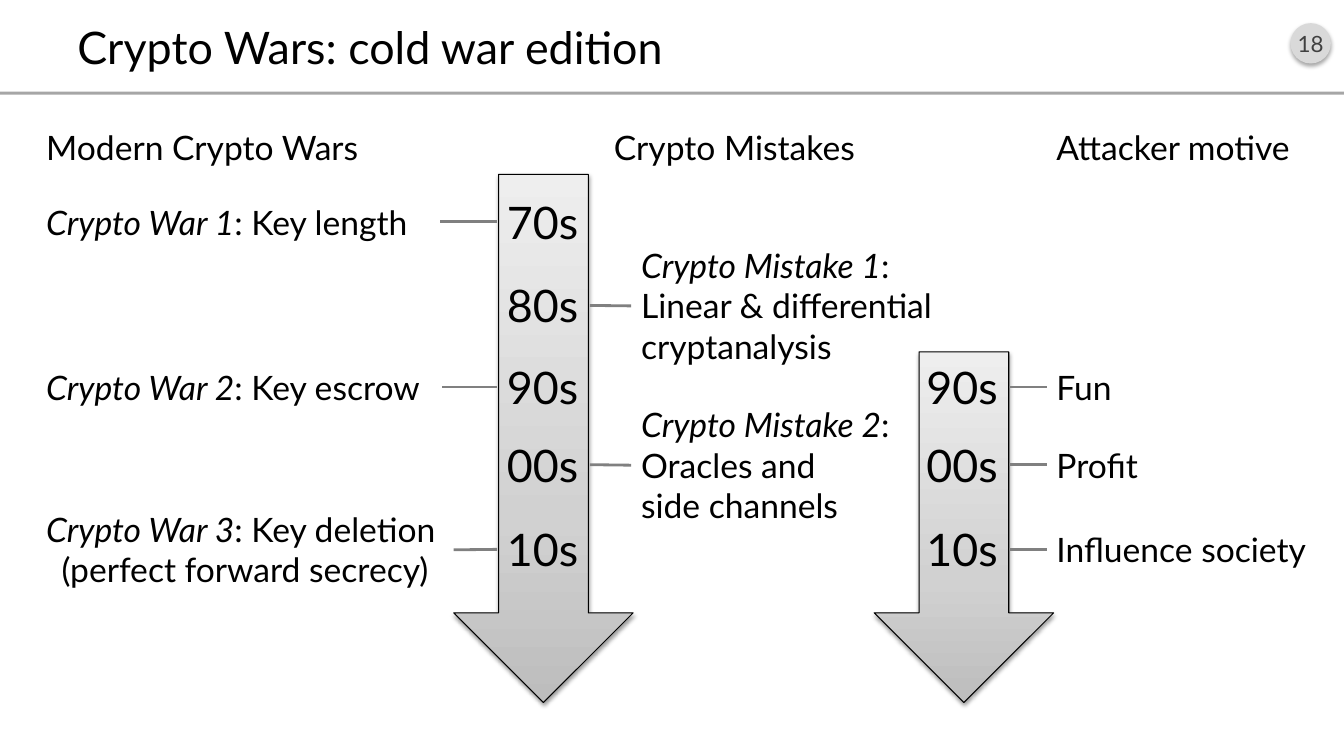
from lxml import etree
from pptx import Presentation
from pptx.dml.color import RGBColor
from pptx.enum.shapes import MSO_CONNECTOR, MSO_SHAPE
from pptx.enum.text import MSO_ANCHOR, MSO_AUTO_SIZE, PP_ALIGN
from pptx.oxml.ns import qn
from pptx.util import Inches, Pt

LINE = MSO_CONNECTOR.STRAIGHT
OVAL, RECT, DOWN_ARROW = MSO_SHAPE.OVAL, MSO_SHAPE.RECTANGLE, MSO_SHAPE.DOWN_ARROW
MIDDLE, TOP = MSO_ANCHOR.MIDDLE, MSO_ANCHOR.TOP
FIT, FIXED = MSO_AUTO_SIZE.SHAPE_TO_FIT_TEXT, MSO_AUTO_SIZE.NONE
LEFT, CENTER = PP_ALIGN.LEFT, PP_ALIGN.CENTER
LEFT_SIDE, RIGHT_SIDE = 1, 3

FONT = "Lato"
BLACK = "000000"
ARROW_STOPS = [(0, "BDBDBD"), (35, "D1D1D1"), (100, "EEEEEE")]

# Top of each decade label on the timelines
DECADES = {"70s": 1.88, "80s": 2.71, "90s": 3.52, "00s": 4.29, "10s": 5.13}
LABEL_WIDTH, LABEL_HEIGHT = 0.92, 0.64
ARROW_WIDTH, ARROW_TIP = 1.78, 6.97
WARS_X, MISTAKES_X, MOTIVES_X = 0.36, 6.26, 10.38

# Decade, top, width, height, heading, rest of the line, second line
WARS = [
    ("70s", 1.95, 4.0, 0.5, "Crypto War 1", ": Key length", None),
    ("90s", 3.59, 4.02, 0.5, "Crypto War 2", ": Key escrow", None),
    ("10s", 5.0, 4.14, 0.91, "Crypto War 3", ": Key deletion",
     "(perfect forward secrecy)"),
]
# Decade, top, width, heading, lines below it
MISTAKES = [
    ("80s", 2.38, 3.16, "Crypto Mistake 1", ["Linear & differential", "cryptanalysis"]),
    ("00s", 3.96, 2.72, "Crypto Mistake 2", ["Oracles and", "side channels"]),
]
# Decade, top, width, motive
MOTIVES = [
    ("90s", 3.59, 0.77, "Fun"),
    ("00s", 4.36, 1.04, "Profit"),
    ("10s", 5.2, 2.72, "Influence society"),
]
# Left, width, heading of each column
HEADINGS = [
    (WARS_X, 5.89, "Modern Crypto Wars"),
    (5.99, 3.02, "Crypto Mistakes"),
    (MOTIVES_X, 2.71, "Attacker motive"),
]


def rgb(hex_color):
    return RGBColor.from_string(hex_color)


def add_run(paragraph, text, size=24, color=BLACK, italic=False):
    run = paragraph.add_run()
    run.text = text
    run.font.name = FONT
    run.font.size = Pt(size)
    run.font.color.rgb = rgb(color)
    run.font.italic = italic


def add_text(slide, left, top, width, height, wrap=True, fit=FIT, anchor=TOP):
    box = slide.shapes.add_textbox(*map(Inches, (left, top, width, height)))
    frame = box.text_frame
    frame.word_wrap = wrap
    frame.auto_size = fit
    frame.vertical_anchor = anchor
    frame.paragraphs[0].alignment = LEFT
    return box


def add_filled_shape(slide, kind, left, top, width, height, color):
    shape = slide.shapes.add_shape(kind, *map(Inches, (left, top, width, height)))
    shape.shadow.inherit = False
    shape.fill.solid()
    shape.fill.fore_color.rgb = rgb(color)
    shape.line.fill.background()
    return shape


def add_color_xml(parent, hex_color):
    return etree.SubElement(parent, qn("a:srgbClr"), val=hex_color)


def add_shadow(shape, alpha, blur, distance):
    effects = shape._element.spPr.find(qn("a:effectLst"))
    shadow = etree.SubElement(
        effects, qn("a:outerShdw"), blurRad=str(Pt(blur)), dist=str(Pt(distance)),
        dir="5400000", algn="ctr", rotWithShape="0")
    color = add_color_xml(shadow, BLACK)
    etree.SubElement(color, qn("a:alpha"), val=str(alpha * 1000))


def set_upward_gradient(shape, stops):
    shape.fill.gradient()
    gradient = shape._element.spPr.find(qn("a:gradFill"))
    gradient.clear()
    stop_list = etree.SubElement(gradient, qn("a:gsLst"))
    for position, color in stops:
        stop = etree.SubElement(stop_list, qn("a:gs"), pos=str(position * 1000))
        add_color_xml(stop, color)
    etree.SubElement(gradient, qn("a:lin"), ang="16200000", scaled="0")


def add_timeline(slide, arrow_left, arrow_top, label_left, decades):
    """Draw a down arrow with its decades and return the labels by decade."""
    arrow = add_filled_shape(slide, DOWN_ARROW, arrow_left, arrow_top,
                             ARROW_WIDTH, ARROW_TIP - arrow_top, ARROW_STOPS[0][1])
    set_upward_gradient(arrow, ARROW_STOPS)
    arrow.line.color.rgb = rgb(BLACK)
    arrow.line.width = Pt(0.75)
    add_shadow(arrow, 38, 3.1, 1.6)
    labels = {}
    for decade in decades:
        label = add_text(slide, label_left, DECADES[decade],
                         LABEL_WIDTH, LABEL_HEIGHT, wrap=False)
        add_run(label.text_frame.paragraphs[0], decade, 32)
        labels[decade] = label
    return labels


def join(slide, left_box, right_box):
    link = slide.shapes.add_connector(LINE, 0, 0, 0, 0)
    link.begin_connect(right_box, LEFT_SIDE)
    link.end_connect(left_box, RIGHT_SIDE)
    link.line.color.rgb = rgb("808080")
    link.line.width = Pt(2)
    etree.SubElement(link._element.spPr, qn("a:effectLst"))


def add_header(slide):
    badge = add_filled_shape(slide, OVAL, 12.8, 0.23, 0.4, 0.4, "D9D9D9")
    add_shadow(badge, 35, 3.1, 1.8)
    frame = badge.text_frame
    frame.margin_left = frame.margin_right = 0
    frame.vertical_anchor = MIDDLE
    frame.paragraphs[0].alignment = CENTER
    add_run(frame.paragraphs[0], "18", 16, "404040")
    add_filled_shape(slide, RECT, 0, 0.91, 13.33, 0.03, "A6A6A6")
    title = add_text(slide, 0.67, 0.16, 12, 0.6, fit=FIXED, anchor=MIDDLE)
    add_run(title.text_frame.paragraphs[0], "Crypto Wars: cold war edition", 32)


def add_war(slide, top, width, height, heading, rest, second_line):
    war = add_text(slide, WARS_X, top, width, height)
    first = war.text_frame.paragraphs[0]
    add_run(first, heading, italic=True)
    add_run(first, rest)
    if second_line:
        second = war.text_frame.add_paragraph()
        second.alignment = CENTER
        add_run(second, second_line)
    return war


def add_mistake(slide, top, width, heading, lines):
    mistake = add_text(slide, MISTAKES_X, top, width, 1.31, wrap=False)
    first = mistake.text_frame.paragraphs[0]
    add_run(first, heading, italic=True)
    add_run(first, ":")
    detail = mistake.text_frame.add_paragraph()
    for index, line in enumerate(lines):
        if index:
            detail.add_line_break()
        add_run(detail, line)
    return mistake


def main():
    prs = Presentation()
    prs.slide_width, prs.slide_height = Inches(13.33), Inches(7.5)
    slide = prs.slides.add_slide(prs.slide_layouts[6])

    add_header(slide)

    # Column headings
    for left, width, text in HEADINGS:
        heading = add_text(slide, left, 1.21, width, 0.7, fit=FIXED)
        heading.text_frame.paragraphs[0].space_before = Pt(8)
        add_run(heading.text_frame.paragraphs[0], text)

    # Timelines
    crypto_labels = add_timeline(slide, 4.5, 1.73, 4.93, list(DECADES))
    motive_labels = add_timeline(slide, 8.67, 3.49, 9.09, list(DECADES)[2:])

    # Events, each joined to its decade
    for decade, *war in WARS:
        join(slide, add_war(slide, *war), crypto_labels[decade])
    for decade, *mistake in MISTAKES:
        join(slide, crypto_labels[decade], add_mistake(slide, *mistake))
    for decade, top, width, text in MOTIVES:
        motive = add_text(slide, MOTIVES_X, top, width, 0.5, wrap=False)
        add_run(motive.text_frame.paragraphs[0], text)
        join(slide, motive_labels[decade], motive)

    prs.save("out.pptx")


if __name__ == "__main__":
    main()
